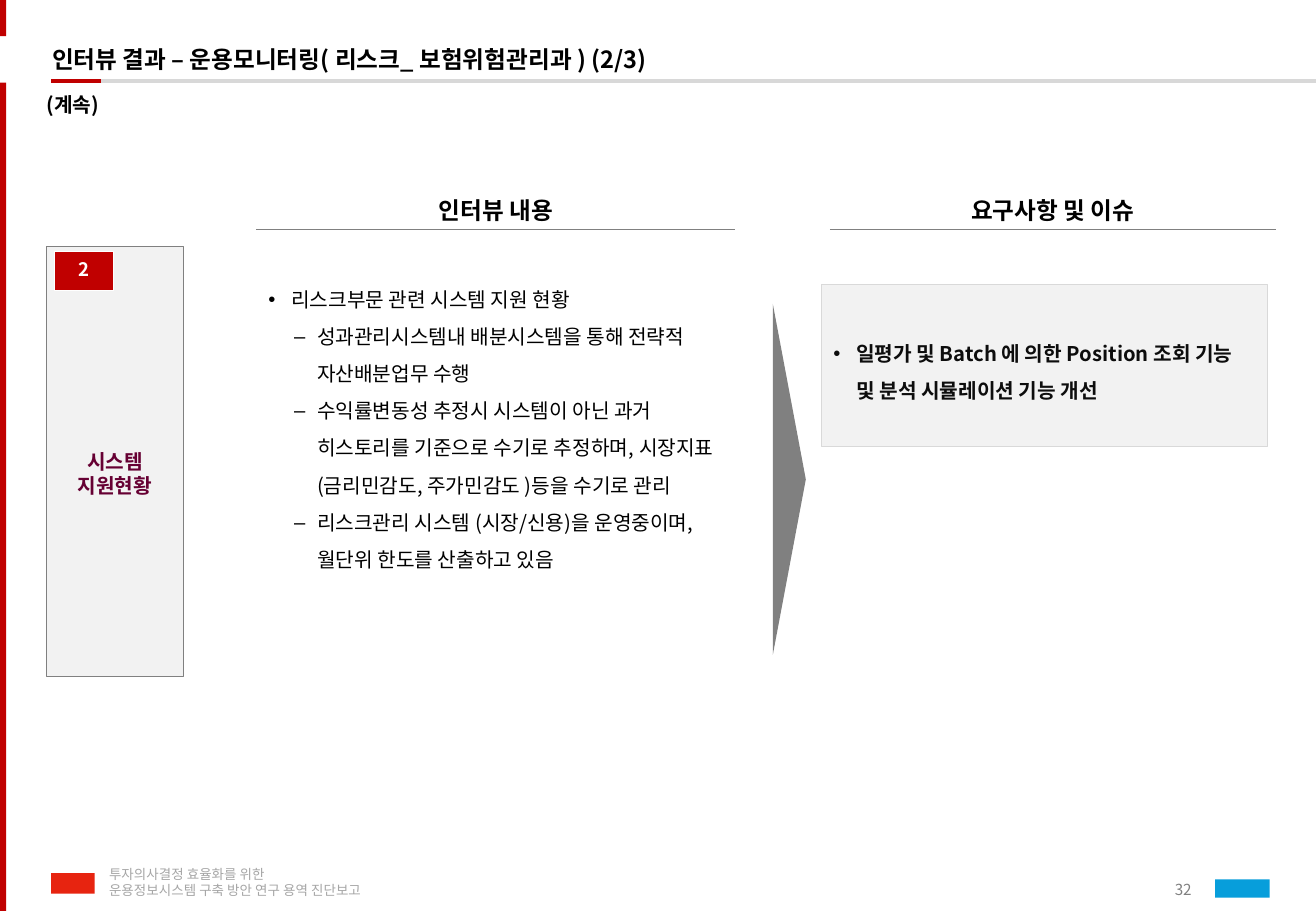
from dataclasses import dataclass

from lxml.etree import SubElement
from pptx import Presentation
from pptx.dml.color import RGBColor
from pptx.enum.shapes import MSO_CONNECTOR, MSO_SHAPE
from pptx.enum.text import MSO_ANCHOR as Anchor, PP_ALIGN as Align
from pptx.oxml.ns import qn
from pptx.util import Cm, Pt

SANS = "Noto Sans CJK KR"
RED, GRAY, PALE, WHITE = "C00000", "808080", "F2F2F2", "FFFFFF"
NO_INSETS = (0, 0, 0, 0)
DEFAULT_INSETS = (0.25, 0.13, 0.25, 0.13)


@dataclass
class Box:
    left: float
    top: float
    width: float
    height: float

    def lengths(self):
        return Cm(self.left), Cm(self.top), Cm(self.width), Cm(self.height)


@dataclass
class Block:
    box: Box
    fill: str
    line: str | None = None
    preset: MSO_SHAPE = MSO_SHAPE.RECTANGLE
    rotation: float = 0


@dataclass
class Rule:
    left: float
    right: float
    y: float
    color: str
    weight: float


@dataclass
class Bullet:
    mark: str
    indent: float
    level: int = 0


@dataclass
class Column:
    title: str
    left: float
    width: float


def rgb(color: str) -> RGBColor:
    return RGBColor.from_string(color)


def draw_block(slide, block: Block):
    shape = slide.shapes.add_shape(block.preset, *block.box.lengths())
    shape.shadow.inherit = False
    shape.rotation = block.rotation
    shape.fill.solid()
    shape.fill.fore_color.rgb = rgb(block.fill)
    if block.line:
        shape.line.color.rgb = rgb(block.line)
        shape.line.width = Pt(0.25)
    else:
        shape.line.fill.background()
    return shape


def draw_rule(slide, rule: Rule) -> None:
    connector = slide.shapes.add_connector(
        MSO_CONNECTOR.STRAIGHT, Cm(rule.left), Cm(rule.y), Cm(rule.right), Cm(rule.y))
    connector.line.color.rgb = rgb(rule.color)
    connector.line.width = Pt(rule.weight)
    SubElement(connector._element.spPr, qn("a:effectLst"))


def add_bullet(paragraph, bullet: Bullet) -> None:
    paragraph.level = bullet.level
    properties = paragraph._p.get_or_add_pPr()
    properties.set("marL", str(Cm(bullet.indent)))
    properties.set("indent", str(-Cm(0.48)))
    SubElement(properties, qn("a:buFont")).set("typeface", "Arial")
    SubElement(properties, qn("a:buChar")).set("char", bullet.mark)


def write(shape, text: str, *, size: float = 12, color: str = "000000", bold: bool = False,
          font: str = SANS, align=Align.LEFT, anchor=Anchor.MIDDLE,
          insets=DEFAULT_INSETS, spacing=None, bullets=()) -> None:
    frame = shape.text_frame
    frame.word_wrap = True
    frame.vertical_anchor = anchor
    (frame.margin_left, frame.margin_top,
     frame.margin_right, frame.margin_bottom) = map(Cm, insets)
    frame.text = text
    for index, paragraph in enumerate(frame.paragraphs):
        paragraph.alignment = align
        if spacing:
            paragraph.line_spacing = spacing
        if bullets:
            add_bullet(paragraph, bullets[index])
        for run in paragraph.runs:
            run.font.size = Pt(size)
            run.font.bold = bold
            run.font.name = font
            run.font.color.rgb = rgb(color)
            SubElement(run._r.get_or_add_rPr(), qn("a:ea")).set("typeface", font)


def add_text(slide, box: Box, text: str, **text_format) -> None:
    write(slide.shapes.add_textbox(*box.lengths()), text, **text_format)


def draw_frame(slide) -> None:
    for block in (
        Block(Box(0, 1.73, 0.13, 17.32), RED),
        Block(Box(0, 0, 0.13, 0.76), RED),
        Block(Box(1.07, 18.26, 0.91, 0.43), "E72410"),
        Block(Box(25.4, 18.39, 1.14, 0.38), "079EDB"),
    ):
        draw_block(slide, block)
    draw_rule(slide, Rule(1.07, 27.51, 1.7, "D8D8D8", 2.25))
    draw_rule(slide, Rule(1.07, 2.11, 1.7, RED, 2.25))
    add_text(slide, Box(23.44, 18.14, 1.47, 0.91), "32", size=9, color=GRAY,
             align=Align.RIGHT, insets=NO_INSETS)
    add_text(slide, Box(2.03, 18.01, 7.11, 0.89),
             "투자의사결정 효율화를 위한\n운용정보시스템 구축 방안 연구 용역 진단보고",
             size=8, color="A6A6A6", spacing=Pt(9.5))
    add_text(slide, Box(1.09, 0.79, 24.28, 0.89),
             "인터뷰 결과 – 운용모니터링( 리스크_ 보험위험관리과 ) (2/3)",
             size=14, bold=True, insets=NO_INSETS)
    add_text(slide, Box(0.97, 1.73, 25.58, 1.7), "(계속)", bold=True,
             anchor=Anchor.TOP, insets=(0, 0.2, 0, 0.3))


def draw_topic(slide) -> None:
    topic = draw_block(slide, Block(Box(0.97, 5.16, 2.87, 8.99), PALE, GRAY))
    write(topic, "시스템 지원현황", color="660033", bold=True, font="Arial",
          align=Align.CENTER, insets=(0.25, 0.63, 0.25, 0.13))
    number = draw_block(slide, Block(Box(1.14, 5.26, 1.22, 0.81), RED, WHITE))
    write(number, "2", size=11, color=WHITE, bold=True, align=Align.CENTER,
          insets=(0, 0.2, 0, 0.2), spacing=0.9)


def draw_interview(slide) -> None:
    for column in (Column("인터뷰 내용", 5.36, 10.01),
                   Column("요구사항 및 이슈", 17.35, 9.32)):
        draw_rule(slide, Rule(column.left, column.left + column.width, 4.8, GRAY, 0.25))
        add_text(slide, Box(column.left, 3.96, column.width, 0.86), column.title,
                 size=14, bold=True, align=Align.CENTER)

    main_point, detail = Bullet("•", 0.48), Bullet("–", 1.02, 1)
    findings = (
        "리스크부문 관련 시스템 지원 현황",
        "성과관리시스템내 배분시스템을 통해 전략적 자산배분업무 수행",
        "수익률변동성 추정시 시스템이 아닌 과거 히스토리를 기준으로 수기로 추정하며, "
        "시장지표 (금리민감도, 주가민감도 )등을 수기로 관리",
        "리스크관리 시스템 (시장/신용)을 운영중이며, 월단위 한도를 산출하고 있음",
    )
    add_text(slide, Box(5.36, 5.61, 10.39, 7.75), "\n".join(findings),
             anchor=Anchor.TOP, spacing=Pt(22),
             bullets=(main_point, detail, detail, detail))
    draw_block(slide, Block(Box(12.83, 9.68, 7.34, 0.69), GRAY,
                            preset=MSO_SHAPE.ISOSCELES_TRIANGLE, rotation=90))
    issue = draw_block(slide, Block(Box(17.17, 5.94, 9.32, 3.4), PALE, "D9D9D9"))
    write(issue, "일평가 및 Batch 에 의한 Position 조회 기능 및 분석 시뮬레이션 기능 개선",
          color="0D0D0D", bold=True, spacing=Pt(22), bullets=(main_point,))


def main() -> None:
    presentation = Presentation()
    presentation.slide_width, presentation.slide_height = Cm(27.51), Cm(19.05)
    slide = presentation.slides.add_slide(presentation.slide_layouts[6])
    draw_frame(slide)
    draw_topic(slide)
    draw_interview(slide)
    presentation.save("out.pptx")


if __name__ == "__main__":
    main()
